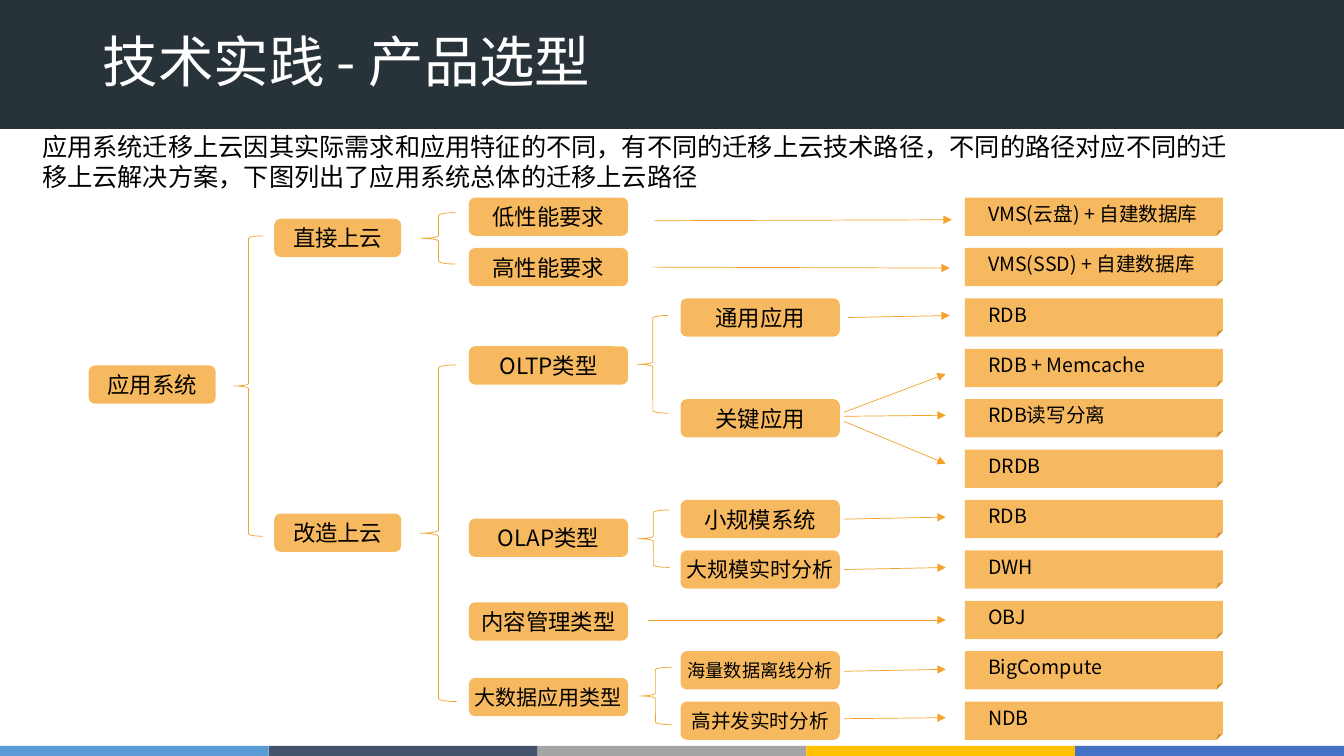
import pptx
import pptx.dml.color
import pptx.enum.shapes
import pptx.enum.text
import pptx.oxml
import pptx.oxml.ns
import pptx.util
from lxml import etree

THEME = {
    "font": "Noto Sans CJK SC",
    "header": "273339", "amber": "F5A22C", "title": "FFFFFF", "text": "000000",
    "stripe": ["5B9BD5", "44546A", "A5A5A5", "FFC000", "4472C4"],
    "title_size": 39.6, "intro_size": 18, "node_size": 16, "result_size": 14,
    "line": 0.5, "alpha": 75000,
}
WIDTH, HEIGHT = 13.33, 7.5
TOP, ROW, NODE_HEIGHT = 1.96, 0.5, 0.38
# Left edge and width of each column of the tree
COLUMNS = [(0.88, 1.26), (2.72, 1.26), (4.65, 1.58), (6.75, 1.58), (9.57, 2.56)]
RESULT_COLUMN = len(COLUMNS) - 1

Inches, Pt = pptx.util.Inches, pptx.util.Pt
RGB = pptx.dml.color.RGBColor.from_string
Shape = pptx.enum.shapes.MSO_SHAPE
Align = pptx.enum.text.PP_ALIGN
Anchor = pptx.enum.text.MSO_ANCHOR
qn = pptx.oxml.ns.qn

deck = pptx.Presentation()
deck.slide_width, deck.slide_height = Inches(WIDTH), Inches(HEIGHT)
slide = deck.slides.add_slide(deck.slide_layouts[6])


def add_plain(kind, left, top, width, height, fill=None):
    """Add a shape with no shadow, and with either a fill or an amber outline."""
    shape = slide.shapes.add_shape(
        kind, Inches(left), Inches(top), Inches(width), Inches(height))
    shape.shadow.inherit = False
    if fill:
        shape.fill.solid()
        shape.fill.fore_color.rgb = RGB(fill)
        shape.line.fill.background()
    else:
        shape.fill.background()
        shape.line.color.rgb = RGB(THEME["amber"])
        shape.line.width = Pt(THEME["line"])
    return shape


def write(frame, wording, size, color, align=Align.LEFT, anchor=Anchor.MIDDLE):
    frame.word_wrap = True
    frame.vertical_anchor = anchor
    paragraph = frame.paragraphs[0]
    paragraph.alignment = align
    run = paragraph.add_run()
    run.text = wording
    run.font.size = Pt(size)
    run.font.name = THEME["font"]
    run.font.color.rgb = RGB(color)
    east_asian = etree.SubElement(run.font._element, qn("a:ea"))
    east_asian.set("typeface", THEME["font"])
    return paragraph


# Header band and the coloured stripe at the foot
add_plain(Shape.RECTANGLE, 0, 0, WIDTH, 1.28, THEME["header"])
stripe_width = WIDTH / len(THEME["stripe"])
for index, color in enumerate(THEME["stripe"]):
    add_plain(Shape.RECTANGLE, index * stripe_width, HEIGHT - 0.1,
              stripe_width, 0.1, color)

title = slide.shapes.add_textbox(Inches(0.92), Inches(0.27), Inches(11.5), Inches(0.74))
heading = write(title.text_frame, "技术实践 - 产品选型", THEME["title_size"], THEME["title"])
heading.line_spacing = 0.9

intro = slide.shapes.add_textbox(Inches(0.32), Inches(1.25), Inches(12.03), Inches(0.71))
write(intro.text_frame,
      "应用系统迁移上云因其实际需求和应用特征的不同，有不同的迁移上云技术路径，"
      "不同的路径对应不同的迁移上云解决方案，下图列出了应用系统总体的迁移上云路径",
      THEME["intro_size"], THEME["text"], anchor=Anchor.TOP)

# Tree nodes: column, row, wording, type size
base = THEME["node_size"]
nodes = [
    (0, 3.33, "应用系统", base),
    (1, 0.42, "直接上云", base),
    (1, 6.27, "改造上云", base),
    (2, 0, "低性能要求", base),
    (2, 1, "高性能要求", base),
    (2, 2.95, "OLTP类型", base),
    (2, 6.37, "OLAP类型", base),
    (2, 8.03, "内容管理类型", base),
    (2, 9.53, "大数据应用类型", base - 1),
    (3, 2, "通用应用", base),
    (3, 4, "关键应用", base),
    (3, 6, "小规模系统", base),
    (3, 7, "大规模实时分析", base - 1),
    (3, 9, "海量数据离线分析", base - 3),
    (3, 10, "高并发实时分析", base - 2),
]
results = [
    "VMS(云盘) + 自建数据库", "VMS(SSD) + 自建数据库", "RDB", "RDB + Memcache",
    "RDB读写分离", "DRDB", "RDB", "DWH", "OBJ", "BigCompute", "NDB",
]
nodes += [(RESULT_COLUMN, row, wording, THEME["result_size"])
          for row, wording in enumerate(results)]

for column, row, wording, size in nodes:
    is_result = column == RESULT_COLUMN
    left, width = COLUMNS[column]
    node = add_plain(Shape.FOLDED_CORNER if is_result else Shape.ROUNDED_RECTANGLE,
                     left, TOP + row * ROW, width, NODE_HEIGHT, THEME["amber"])
    tint = node.fill._xPr.find(".//" + qn("a:srgbClr"))
    etree.SubElement(tint, qn("a:alpha")).set("val", str(THEME["alpha"]))
    frame = node.text_frame
    frame.margin_left = Inches(0.23 if is_result else 0)
    frame.margin_right = frame.margin_top = frame.margin_bottom = 0
    write(frame, wording, size, THEME["text"],
          Align.LEFT if is_result else Align.CENTER)

# Braces that open each branch: left, top, width, height
braces = [
    (2.32, 2.34, 0.29, 2.98),
    (4.18, 2.11, 0.34, 0.51),
    (4.17, 3.62, 0.36, 3.34),
    (6.32, 3.13, 0.31, 0.97),
    (6.32, 5.06, 0.32, 0.57),
    (6.34, 6.62, 0.32, 0.57),
]
for brace in braces:
    add_plain(Shape.LEFT_BRACE, *brace)

# Arrows to the results: start x, start y, end x, end y
arrows = [
    (6.49, 2.19, 9.44, 2.18),
    (6.47, 2.65, 9.42, 2.66),
    (8.41, 3.15, 9.42, 3.13),
    (8.37, 4.09, 9.38, 3.71),
    (8.37, 4.13, 9.38, 4.12),
    (8.37, 4.18, 9.38, 4.60),
    (8.37, 5.15, 9.38, 5.13),
    (8.37, 5.65, 9.38, 5.63),
    (6.43, 6.15, 9.38, 6.15),
    (8.37, 6.66, 9.38, 6.64),
    (8.37, 7.13, 9.38, 7.12),
]
for ends in arrows:
    arrow = slide.shapes.add_connector(
        pptx.enum.shapes.MSO_CONNECTOR.STRAIGHT, *map(Inches, ends))
    arrow.line.color.rgb = RGB(THEME["amber"])
    arrow.line.width = Pt(THEME["line"])
    etree.SubElement(arrow.line._get_or_add_ln(), qn("a:tailEnd")).set("type", "triangle")
    etree.SubElement(arrow._element.spPr, qn("a:effectLst"))

deck.save("out.pptx")
